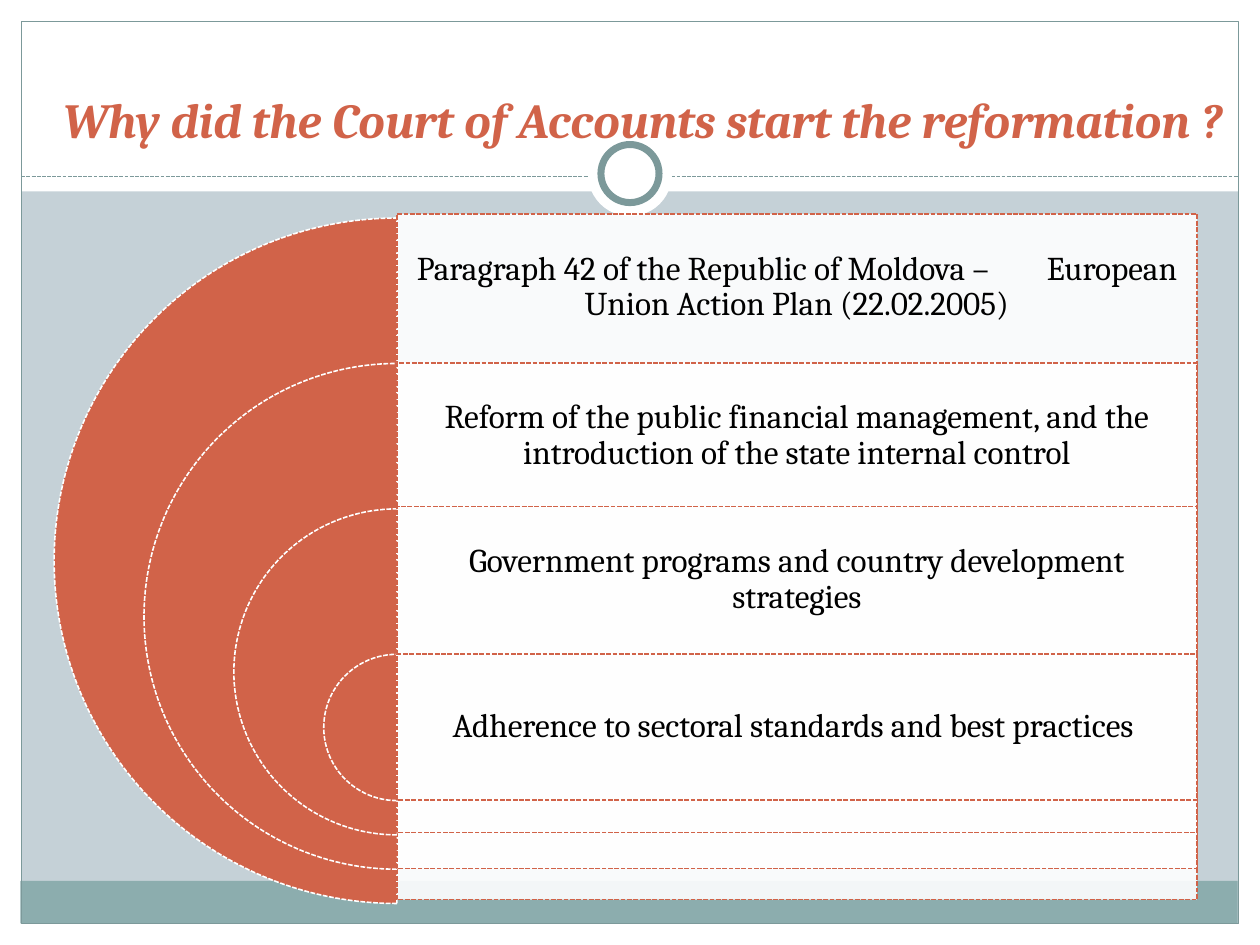
from lxml import etree
from pptx import Presentation
from pptx.dml.color import RGBColor
from pptx.enum.dml import MSO_LINE
from pptx.enum.shapes import MSO_CONNECTOR, MSO_SHAPE
from pptx.enum.text import MSO_ANCHOR, PP_ALIGN
from pptx.oxml.ns import qn
from pptx.util import Pt

RECT, OVAL, PIE = MSO_SHAPE.RECTANGLE, MSO_SHAPE.OVAL, MSO_SHAPE.PIE
DASH = MSO_LINE.SQUARE_DOT
FONT = "Cambria"
COLORS = {
    "back": "C5D1D7", "white": "FFFFFF", "band": "8CADAE",
    "frame": "7C999A", "rust": "D16349", "black": "000000",
}
REASONS = [
    "Paragraph 42 of the Republic of Moldova – \tEuropean Union Action Plan (22.02.2005)",
    "Reform of the public financial management, and the introduction of the state internal control",
    "Government programs and country development strategies",
    "Adherence to sectoral standards and best practices ",
]
# Nested discs: each is smaller and lower by a fixed step
SIZE, SHRINK = 391.7, 102.7
TOP, DROP = 124.6, 83.1
AXIS, WIDE, ROW = 226.8, 457.2, 83.5
TOPS = [122.4, 207.4, 289.4, 373.7]


def color(name):
    return RGBColor.from_string(COLORS[name])


def stroke(line, name, width, dash=None):
    line.color.rgb = color(name)
    line.width = Pt(width)
    if dash:
        line.dash_style = dash


def add_form(shapes, kind, box, fill=None, line=None, width=0.75, dash=None):
    form = shapes.add_shape(kind, *map(Pt, box))
    form.shadow.inherit = False
    if fill:
        form.fill.solid()
        form.fill.fore_color.rgb = color(fill)
    else:
        form.fill.background()
    if line:
        stroke(form.line, line, width, dash)
    else:
        form.line.fill.background()
    return form


def fade(form, percent):
    tint = form.fill._xPr.find(qn("a:solidFill"))[0]
    etree.SubElement(tint, qn("a:alpha"), val=str(percent * 1000))


def add_rule(shapes, left, right, top):
    rule = shapes.add_connector(
        MSO_CONNECTOR.STRAIGHT, Pt(left), Pt(top), Pt(right), Pt(top))
    stroke(rule.line, "frame", 0.75, DASH)
    etree.SubElement(rule._element.spPr, qn("a:effectLst"))


def add_text(shapes, box, text, size, tint, anchor, bold=False):
    frame = shapes.add_textbox(*map(Pt, box)).text_frame
    frame.word_wrap = True
    frame.vertical_anchor = anchor
    para = frame.paragraphs[0]
    para.text = text
    para.alignment = PP_ALIGN.CENTER
    font = para.runs[0].font
    font.name, font.size = FONT, Pt(size)
    font.bold = font.italic = bold
    font.color.rgb = color(tint)
    return frame


def add_frame(shapes):
    # White margins and header, then the footer band
    for box in [(0, 528, 720, 12), (0, 0, 720, 109.4),
                (0, 0, 12, 540), (708, 0, 12, 540)]:
        add_form(shapes, RECT, box, "white")
    add_form(shapes, RECT, (11.6, 503.3, 695.6, 24.4), "band")
    add_form(shapes, RECT, (12.2, 12.2, 695.6, 515.6), line="frame")
    # Header rule with its ring
    add_rule(shapes, 12.2, 707.8, 100.8)
    add_form(shapes, OVAL, (336, 75.6, 48, 48), "white")
    add_form(shapes, OVAL, (343.4, 82.6, 33.2, 33.2), "white", "frame", 4)


def add_reason(shapes, step, text):
    size = SIZE - SHRINK * step
    disc = add_form(shapes, PIE,
                    (AXIS - size / 2, TOP + DROP * step, size, size),
                    "rust", "white", 0.9, DASH)
    disc.adjustments[0], disc.adjustments[1] = 54, 162
    top = TOPS[step]
    panel = add_form(shapes, RECT, (AXIS, top, WIDE, size),
                     "white", "rust", 0.9, DASH)
    fade(panel, 90)
    frame = add_text(shapes, (AXIS, top, WIDE, ROW), text, 19, "black",
                     MSO_ANCHOR.MIDDLE)
    frame.margin_left = frame.margin_right = Pt(5.7)
    frame.margin_top = frame.margin_bottom = Pt(5.7)
    frame.paragraphs[0].line_spacing = 0.9


def main():
    deck = Presentation()
    deck.slide_width, deck.slide_height = Pt(720), Pt(540)
    slide = deck.slides.add_slide(deck.slide_layouts[6])
    slide.background.fill.solid()
    slide.background.fill.fore_color.rgb = color("back")
    add_frame(slide.shapes)
    # Title
    add_text(slide.shapes, (14.4, 9.4, 705.6, 79.2),
             "Why did the Court of Accounts start the reformation ?",
             28, "rust", MSO_ANCHOR.BOTTOM, bold=True)
    # Reasons, from the outer disc to the inner one
    group = slide.shapes.add_group_shape()
    for step, text in enumerate(REASONS):
        add_reason(group.shapes, step, text)
    deck.save("out.pptx")


if __name__ == "__main__":
    main()
